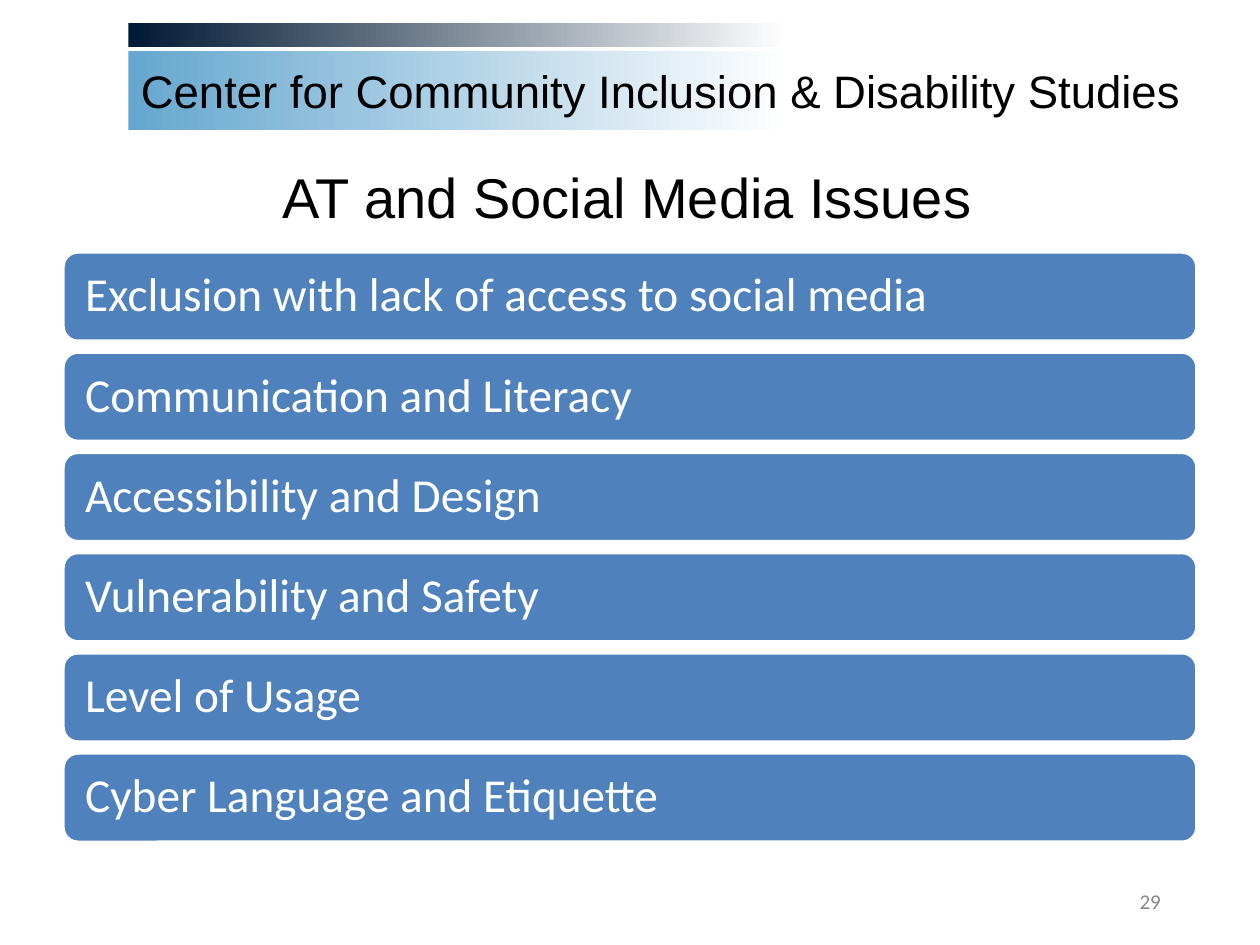
from dataclasses import dataclass

from pptx import Presentation
from pptx.dml.color import RGBColor
from pptx.enum.shapes import MSO_SHAPE
from pptx.enum.text import MSO_ANCHOR, PP_ALIGN
from pptx.util import Cm, Pt

RECT, ROUNDED = MSO_SHAPE.RECTANGLE, MSO_SHAPE.ROUNDED_RECTANGLE
LEFT, CENTER, RIGHT = PP_ALIGN.LEFT, PP_ALIGN.CENTER, PP_ALIGN.RIGHT
MIDDLE, BOTTOM = MSO_ANCHOR.MIDDLE, MSO_ANCHOR.BOTTOM

BLACK = RGBColor(0x00, 0x00, 0x00)
WHITE = RGBColor(0xFF, 0xFF, 0xFF)
GRAY = RGBColor(0x88, 0x88, 0x88)
BLUE = RGBColor(0x4F, 0x81, 0xBD)
SKY = RGBColor(0x66, 0xA7, 0xCF)
NAVY = RGBColor(0x00, 0x19, 0x34)

ISSUES = [
    "Exclusion with lack of access to social media",
    "Communication and Literacy",
    "Accessibility and Design",
    "Vulnerability and Safety",
    "Level of Usage",
    "Cyber Language and Etiquette",
]
ISSUE_TOP, ISSUE_STEP = 5.08, 2.02


@dataclass
class Box:
    """Position and size in centimetres."""
    left: float
    top: float
    width: float
    height: float

    def lengths(self) -> tuple:
        return Cm(self.left), Cm(self.top), Cm(self.width), Cm(self.height)


@dataclass
class TextStyle:
    size: float
    font: str
    color: RGBColor
    align: PP_ALIGN = LEFT
    anchor: MSO_ANCHOR = MIDDLE
    spacing: float = 1.0
    inset: float = 0.25


HEADER = TextStyle(26, "Arial", BLACK)
TITLE = TextStyle(32, "Arial", BLACK, CENTER, BOTTOM, 0.9)
ISSUE = TextStyle(27, "Calibri", WHITE, spacing=0.9, inset=0.36)
NUMBER = TextStyle(12, "Calibri", GRAY, RIGHT)


def write(sp, text: str, style: TextStyle) -> None:
    tf = sp.text_frame
    tf.word_wrap = True
    tf.vertical_anchor = style.anchor
    tf.margin_left = tf.margin_right = Cm(style.inset)
    tf.margin_top = tf.margin_bottom = Cm(0.13)
    tf.text = text
    p = tf.paragraphs[0]
    p.alignment, p.line_spacing = style.align, style.spacing
    font = p.runs[0].font
    font.size, font.name = Pt(style.size), style.font
    font.color.rgb = style.color


def add_fading_bar(s, box: Box, color: RGBColor):
    sp = s.shapes.add_shape(RECT, *box.lengths())
    sp.shadow.inherit = False
    sp.line.fill.background()
    sp.fill.gradient()
    sp.fill.gradient_angle = 0
    start, end = sp.fill.gradient_stops
    start.color.rgb, start.position = color, 0
    end.color.rgb, end.position = WHITE, 0.6
    return sp


def add_issue(s, box: Box, text: str) -> None:
    sp = s.shapes.add_shape(ROUNDED, *box.lengths())
    sp.shadow.inherit = False
    sp.fill.solid()
    sp.fill.fore_color.rgb = BLUE
    sp.line.color.rgb = WHITE
    sp.line.width = Pt(2)
    write(sp, text, ISSUE)


def add_text(s, box: Box, text: str, style: TextStyle) -> None:
    write(s.shapes.add_textbox(*box.lengths()), text, style)


def main() -> None:
    prs = Presentation()
    prs.slide_width, prs.slide_height = Cm(25.4), Cm(19.05)
    s = prs.slides.add_slide(prs.slide_layouts[6])

    # Header band
    band = add_fading_bar(s, Box(2.59, 1.02, 22.28, 1.6), SKY)
    write(band, "Center for Community Inclusion & Disability Studies", HEADER)
    add_fading_bar(s, Box(2.59, 0.46, 22.17, 0.48), NAVY)

    # Title
    add_text(s, Box(1.19, 3.43, 22.91, 1.35), "AT and Social Media Issues", TITLE)

    # Issue list
    for i, issue in enumerate(ISSUES):
        add_issue(s, Box(1.27, ISSUE_TOP + i * ISSUE_STEP, 22.86, 1.8), issue)

    # Slide number
    add_text(s, Box(17.93, 17.65, 5.72, 1.02), "29", NUMBER)

    prs.save("out.pptx")


if __name__ == "__main__":
    main()
